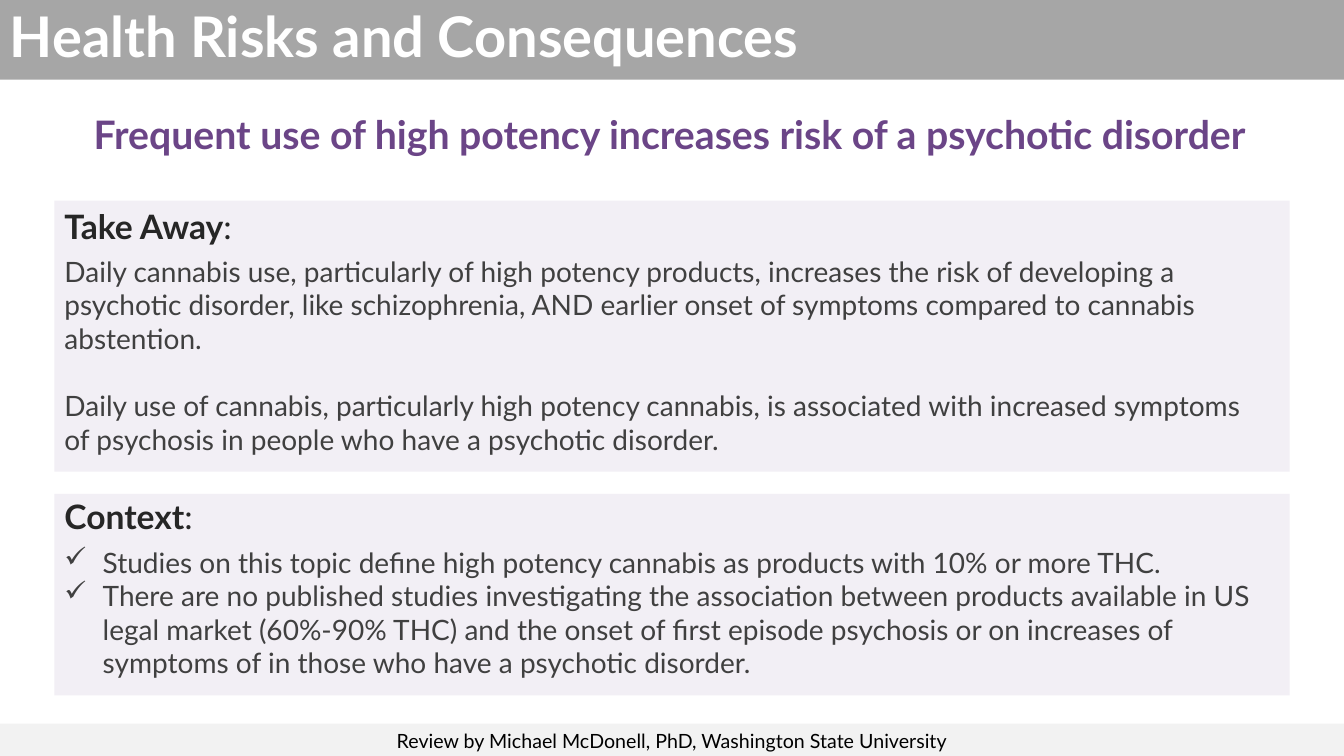
from lxml import etree
from pptx import Presentation
from pptx.dml.color import RGBColor
from pptx.enum.shapes import MSO_SHAPE as SHAPE
from pptx.enum.text import MSO_ANCHOR as ANCHOR, PP_ALIGN as ALIGN
from pptx.oxml.ns import qn
from pptx.util import Inches, Pt

FONT = "Lato"
WHITE = RGBColor(0xFF, 0xFF, 0xFF)
BLACK = RGBColor(0x00, 0x00, 0x00)
BANNER = RGBColor(0xA6, 0xA6, 0xA6)
PANEL = RGBColor(0xF2, 0xEF, 0xF5)
FOOTER = RGBColor(0xF2, 0xF2, 0xF2)
PURPLE = RGBColor(0x6B, 0x45, 0x87)
HEADING = RGBColor(0x26, 0x26, 0x26)
BODY = RGBColor(0x40, 0x40, 0x40)

prs = Presentation()
prs.slide_width, prs.slide_height = Inches(13.33), Inches(7.5)
s = prs.slides.add_slide(prs.slide_layouts[6])


def add_rect(left, top, width, height, fill):
    sp = s.shapes.add_shape(SHAPE.RECTANGLE, Inches(left), Inches(top),
                            Inches(width), Inches(height))
    sp.shadow.inherit = False
    sp.fill.solid()
    sp.fill.fore_color.rgb = fill
    sp.line.fill.background()
    return sp


def add_run(p, text, size, color, bold=False):
    r = p.add_run()
    r.text = text
    r.font.name, r.font.size, r.font.bold = FONT, Pt(size), bold
    r.font.color.rgb = color


# Title banner
tf = add_rect(0, 0, 13.33, 0.79, BANNER).text_frame
tf.word_wrap = True
tf.vertical_anchor = ANCHOR.MIDDLE
p = tf.paragraphs[0]
p.alignment = ALIGN.LEFT
p.line_spacing = 0.9
add_run(p, "Health Risks and Consequences", 40, WHITE, True)

# Panels behind the text
for top, height in ((1.99, 2.69), (4.9, 2)):
    add_rect(0.54, top, 12.25, height, PANEL)

# Sections: heading, space before heading, space between body paragraphs, bullet, body
sections = [
    ("Take Away", 0, 24, None, [
        "Daily cannabis use, particularly of high potency products, increases the risk of "
        "developing a psychotic disorder, like schizophrenia, AND earlier onset of symptoms "
        "compared to cannabis abstention.",
        "Daily use of cannabis, particularly high potency cannabis, is associated with "
        "increased symptoms of psychosis in people who have a psychotic disorder."]),
    ("Context", 28.8, 0, "✓", [
        "Studies on this topic define high potency cannabis as products with 10% or more THC.",
        "There are no published studies investigating the association between products "
        "available in US legal market (60%-90% THC) and the onset of first episode psychosis "
        "or on increases of symptoms of in those who have a psychotic disorder."]),
]
tf = s.shapes.add_textbox(Inches(0.54), Inches(1.99), Inches(12.12), Inches(4.78)).text_frame
tf.word_wrap = True
for i, (heading, before, gap, bullet, body) in enumerate(sections):
    p = tf.add_paragraph() if i else tf.paragraphs[0]
    if before:
        p.space_before = Pt(before)
    p.space_after = Pt(6)
    add_run(p, heading, 24, HEADING, True)
    add_run(p, ":", 24, HEADING)
    for j, text in enumerate(body):
        p = tf.add_paragraph()
        if j and gap:
            p.space_before = Pt(gap)
        if bullet:
            pPr = p._p.get_or_add_pPr()
            pPr.set("marL", str(Inches(0.38)))
            pPr.set("indent", str(-Inches(0.38)))
            etree.SubElement(pPr, qn("a:buChar")).set("char", bullet)
        add_run(p, text, 20, BODY)

# Key message
tf = s.shapes.add_textbox(Inches(0.21), Inches(1.1), Inches(12.86), Inches(0.57)).text_frame
tf.word_wrap = True
p = tf.paragraphs[0]
p.alignment = ALIGN.CENTER
p.line_spacing = 0.9
add_run(p, "Frequent use of high potency increases risk of a psychotic disorder", 28, PURPLE, True)

# Footer with reviewer
tf = add_rect(0, 7.18, 13.33, 0.34, FOOTER).text_frame
tf.word_wrap = True
tf.vertical_anchor = ANCHOR.TOP
p = tf.paragraphs[0]
p.alignment = ALIGN.CENTER
add_run(p, "Review by Michael McDonell, PhD, Washington State University", 14, BLACK)

prs.save("out.pptx")
